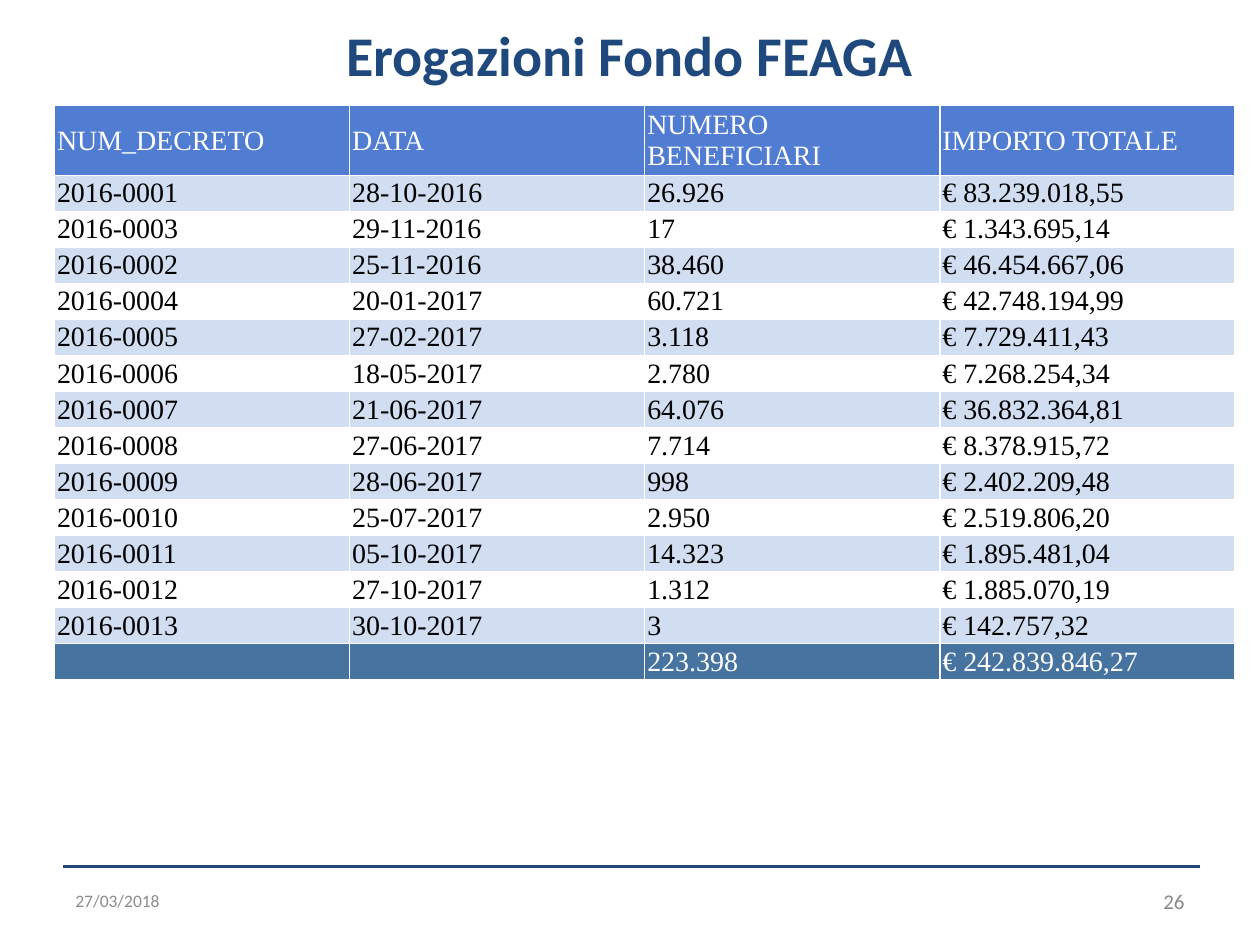
import pptx
import pptx.util
import pptx.dml.color
import pptx.enum.shapes
import pptx.enum.text
import pptx.oxml.ns
import lxml.etree

Pt = pptx.util.Pt
ALIGN = pptx.enum.text.PP_ALIGN
ANCHOR = pptx.enum.text.MSO_ANCHOR

# Content
TITLE = "Erogazioni Fondo FEAGA"
DATE = "27/03/2018"
PAGE = "26"
HEADER = ("NUM_DECRETO", "DATA", "NUMERO BENEFICIARI", "IMPORTO TOTALE")
PAYMENTS = [
    ("2016-0001", "28-10-2016", "26.926", "€ 83.239.018,55"),
    ("2016-0003", "29-11-2016", "17", "€ 1.343.695,14"),
    ("2016-0002", "25-11-2016", "38.460", "€ 46.454.667,06"),
    ("2016-0004", "20-01-2017", "60.721", "€ 42.748.194,99"),
    ("2016-0005", "27-02-2017", "3.118", "€ 7.729.411,43"),
    ("2016-0006", "18-05-2017", "2.780", "€ 7.268.254,34"),
    ("2016-0007", "21-06-2017", "64.076", "€ 36.832.364,81"),
    ("2016-0008", "27-06-2017", "7.714", "€ 8.378.915,72"),
    ("2016-0009", "28-06-2017", "998", "€ 2.402.209,48"),
    ("2016-0010", "25-07-2017", "2.950", "€ 2.519.806,20"),
    ("2016-0011", "05-10-2017", "14.323", "€ 1.895.481,04"),
    ("2016-0012", "27-10-2017", "1.312", "€ 1.885.070,19"),
    ("2016-0013", "30-10-2017", "3", "€ 142.757,32"),
]
TOTAL = ("", "", "223.398", "€ 242.839.846,27")

COLORS = {
    "navy": "1F497D", "date": "8C8C8C", "page": "898989",
    "header": "507CD1", "band": "D1DDF1", "total": "4673A0",
    "white": "FFFFFF", "black": "000000",
}
COLUMN_WIDTH = 168.65
ROW_HEIGHT = 19.66
TABLE_SIZE = 16


def color(name):
    return pptx.dml.color.RGBColor.from_string(COLORS[name])


def add_run(paragraph, text, font, size, color_name, bold=False):
    run = paragraph.add_run()
    run.text = text
    run.font.name = font
    run.font.size = Pt(size)
    run.font.bold = bold
    run.font.color.rgb = color(color_name)


def add_footer(slide, left, text, size, color_name, alignment):
    box = slide.shapes.add_textbox(Pt(left), Pt(500.4), Pt(168), Pt(28.8))
    frame = box.text_frame
    frame.word_wrap = True
    frame.vertical_anchor = ANCHOR.MIDDLE
    frame.paragraphs[0].alignment = alignment
    add_run(frame.paragraphs[0], text, "Calibri", size, color_name)


def add_borders(cell):
    properties = cell._tc.get_or_add_tcPr()
    for side in ("lnL", "lnR", "lnT", "lnB"):
        line = lxml.etree.SubElement(properties, pptx.oxml.ns.qn("a:" + side), w=str(Pt(0.75)))
        fill = lxml.etree.SubElement(line, pptx.oxml.ns.qn("a:solidFill"))
        lxml.etree.SubElement(fill, pptx.oxml.ns.qn("a:srgbClr"), val=COLORS["white"])


def fill_cell(cell, text, fill_name, text_color):
    cell.margin_left = cell.margin_right = Pt(1.4)
    cell.margin_top = cell.margin_bottom = Pt(0.7)
    cell.vertical_anchor = ANCHOR.MIDDLE
    add_borders(cell)
    cell.fill.solid()
    cell.fill.fore_color.rgb = color(fill_name)
    paragraph = cell.text_frame.paragraphs[0]
    if text:
        add_run(paragraph, text, "Times New Roman", TABLE_SIZE, text_color)
    else:
        # An empty cell still needs its text size, or the row grows
        lxml.etree.SubElement(paragraph._p, pptx.oxml.ns.qn("a:endParaRPr"), sz=str(TABLE_SIZE * 100))


presentation = pptx.Presentation()
presentation.slide_width, presentation.slide_height = Pt(720), Pt(540)
slide = presentation.slides.add_slide(presentation.slide_layouts[5])

# Footer rule
rule = slide.shapes.add_connector(
    pptx.enum.shapes.MSO_CONNECTOR.STRAIGHT, Pt(36), Pt(495), Pt(686), Pt(495))
rule.line.color.rgb = color("navy")
rule.line.width = Pt(1.5)
lxml.etree.SubElement(rule._element.spPr, pptx.oxml.ns.qn("a:effectLst"))

# Title
title = slide.shapes.title
title.left, title.top, title.width, title.height = Pt(7.2), Pt(8), Pt(705), Pt(58)
title.text_frame.vertical_anchor = ANCHOR.TOP
title.text_frame.paragraphs[0].alignment = ALIGN.CENTER
add_run(title.text_frame.paragraphs[0], TITLE, "Calibri", 32, "navy", bold=True)

# Date and page number
add_footer(slide, 36, DATE, 10, "date", ALIGN.LEFT)
add_footer(slide, 516, PAGE, 12, "page", ALIGN.RIGHT)

# Payments table
rows = [(HEADER, "header", "white")]
for index, payment in enumerate(PAYMENTS):
    rows.append((payment, "white" if index % 2 else "band", "black"))
rows.append((TOTAL, "total", "white"))

table = slide.shapes.add_table(
    len(rows), len(HEADER), Pt(31.2), Pt(60.5),
    Pt(COLUMN_WIDTH * len(HEADER)), Pt(ROW_HEIGHT * len(rows))).table
table.first_row = False
table.horz_banding = False
for column in table.columns:
    column.width = Pt(COLUMN_WIDTH)
for table_row, (texts, fill_name, text_color) in zip(table.rows, rows):
    table_row.height = Pt(ROW_HEIGHT)
    for cell, text in zip(table_row.cells, texts):
        fill_cell(cell, text, fill_name, text_color)

presentation.save("out.pptx")
